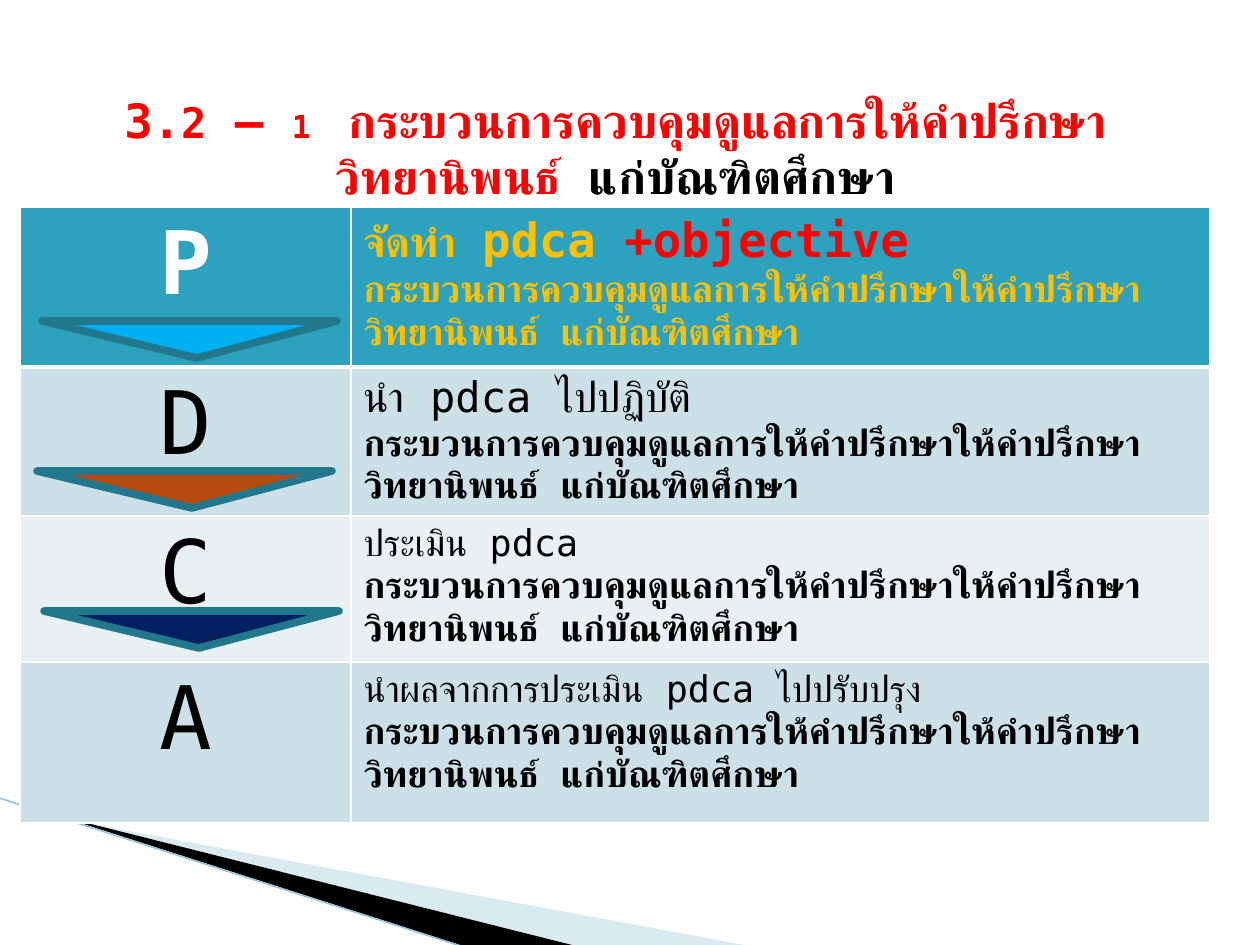
from lxml import etree
from pptx import Presentation
from pptx.dml.color import RGBColor
from pptx.enum.shapes import MSO_CONNECTOR, MSO_SHAPE
from pptx.enum.text import MSO_ANCHOR, PP_ALIGN
from pptx.oxml.ns import qn
from pptx.util import Emu, Pt

TRIANGLE = MSO_SHAPE.ISOSCELES_TRIANGLE
STRAIGHT = MSO_CONNECTOR.STRAIGHT
MIDDLE = MSO_ANCHOR.MIDDLE
CENTER, LEFT = PP_ALIGN.CENTER, PP_ALIGN.LEFT

PX_PER_INCH = 126
FONT = "DejaVu Sans Mono"
WHITE, BLACK, RED, GOLD = "FFFFFF", "000000", "FF0000", "FFC000"
HEADER, BAND_DARK, BAND_LIGHT = "2DA2BF", "CDE0E8", "E8F0F4"
TEAL = "21788D"

PROCESS = "กระบวนการควบคุมดูแลการให้คำปรึกษาให้คำปรึกษาวิทยานิพนธ์ แก่บัณฑิตศึกษา"

# A span is (text, size, colour, bold).
TITLE = [
    ("3.", 27, RED, True),
    ("2", 24, RED, True),
    (" – ", 27, RED, True),
    ("1  ", 18, RED, True),
    ("กระบวนการควบคุมดูแลการให้คำปรึกษาวิทยานิพนธ์ ", 27, RED, True),
    ("แก่บัณฑิตศึกษา", 27, BLACK, True),
]
PLAN_SPANS = [
    ("จัดทำ ", 24, GOLD, True),
    ("pdca ", 27, GOLD, True),
    ("+objective", 27, RED, True),
]
# Letter, letter colour, process colour, fill, row height, first-line spans
STEPS = [
    ("P", WHITE, GOLD, HEADER, 160, PLAN_SPANS),
    ("D", BLACK, BLACK, BAND_DARK, 149, [("นำ pdca ไปปฏิบัติ", 24, BLACK, False)]),
    ("C", BLACK, BLACK, BAND_LIGHT, 146, [("ประเมิน pdca", 21, BLACK, False)]),
    ("A", BLACK, BLACK, BAND_DARK, 161,
     [("นำผลจากการประเมิน pdca ไปปรับปรุง", 21, BLACK, False)]),
]
ARROWS = [(42, 321, "00B0F0"), (37, 471, "B54A10"), (44, 611, "002060")]


def px(length):
    return Emu(round(length * 914400 / PX_PER_INCH))


def rgb(color):
    return RGBColor.from_string(color)


class SlideBuilder:
    """Draws elements on one slide in a shared style."""

    def __init__(self, slide, font):
        self.slide = slide
        self.font = font

    def add_spans(self, para, spans, align=LEFT):
        para.alignment = align
        for text, size, color, bold in spans:
            run = para.add_run()
            run.text = text
            run.font.size = Pt(size)
            run.font.bold = bold
            run.font.name = self.font
            run.font.color.rgb = rgb(color)
            for script in ("a:ea", "a:cs"):
                etree.SubElement(run.font._element, qn(script), typeface=self.font)

    def text(self, left, top, width, height, spans):
        box = self.slide.shapes.add_textbox(px(left), px(top), px(width), px(height))
        frame = box.text_frame
        frame.word_wrap = True
        frame.vertical_anchor = MIDDLE
        self.add_spans(frame.paragraphs[0], spans, CENTER)

    def polygon(self, points, color, opacity=100):
        start, *rest = [(px(x), px(y)) for x, y in points]
        builder = self.slide.shapes.build_freeform(*start)
        builder.add_line_segments(rest, close=True)
        shape = builder.convert_to_shape()
        shape.shadow.inherit = False
        shape.line.fill.background()
        shape.fill.solid()
        shape.fill.fore_color.rgb = rgb(color)
        if opacity < 100:
            fill = shape._element.spPr.find(qn("a:solidFill"))
            etree.SubElement(fill[0], qn("a:alpha"), val=str(opacity * 1000))

    def line(self, start, end, color, weight):
        points = [px(value) for value in (*start, *end)]
        connector = self.slide.shapes.add_connector(STRAIGHT, *points)
        connector.line.color.rgb = rgb(color)
        connector.line.width = Pt(weight)
        etree.SubElement(connector._element.spPr, qn("a:effectLst"))

    def down_arrow(self, left, top, color):
        shape = self.slide.shapes.add_shape(
            TRIANGLE, px(left), px(top), px(295), px(37))
        shape.adjustments[0] = 0.475
        shape.rotation = 180
        shape.shadow.inherit = False
        shape.fill.solid()
        shape.fill.fore_color.rgb = rgb(color)
        shape.line.color.rgb = rgb(TEAL)
        shape.line.width = Pt(4.33)
        outline = shape._element.spPr.find(qn("a:ln"))
        etree.SubElement(outline, qn("a:round"))

    def cell_style(self, cell, color, bottom_weight):
        """Set white borders and then the fill, in the order the schema asks."""
        props = cell._tc.get_or_add_tcPr()
        weights = {"lnL": 1, "lnR": 1, "lnT": 1, "lnB": bottom_weight}
        for side, weight in weights.items():
            border = etree.SubElement(props, qn("a:" + side), w=str(int(Pt(weight))))
            fill = etree.SubElement(border, qn("a:solidFill"))
            etree.SubElement(fill, qn("a:srgbClr"), val=WHITE)
        cell.fill.solid()
        cell.fill.fore_color.rgb = rgb(color)

    def step_table(self, left, top, widths, steps):
        height = sum(step[4] for step in steps)
        table = self.slide.shapes.add_table(
            len(steps), len(widths), px(left), px(top),
            px(sum(widths)), px(height)).table
        for column, width in zip(table.columns, widths):
            column.width = px(width)
        for index, step in enumerate(steps):
            letter, letter_color, process_color, fill, row_height, spans = step
            is_header = index == 0
            table.rows[index].height = px(row_height)
            letter_cell, detail_cell = table.rows[index].cells
            for cell in (letter_cell, detail_cell):
                self.cell_style(cell, fill, 3 if is_header else 1)
            self.add_spans(letter_cell.text_frame.paragraphs[0],
                           [(letter, 50, letter_color, is_header)], CENTER)
            frame = detail_cell.text_frame
            self.add_spans(frame.paragraphs[0], spans)
            self.add_spans(frame.add_paragraph(), [(PROCESS, 21, process_color, True)])


def main():
    deck = Presentation()
    deck.slide_width, deck.slide_height = px(1260), px(945)
    page = SlideBuilder(deck.slides.add_slide(deck.slide_layouts[6]), FONT)

    page.polygon([(69, 820), (750, 946), (575, 946), (69, 819)], "A0CBDC", 40)
    page.polygon([(67, 818), (576, 946), (469, 948), (68, 819)], BLACK)
    page.line((-1, 798), (467, 948), "97C5D8", 0.95)
    page.step_table(20, 207, [331, 859], STEPS)
    page.text(0, 118, 1231, 59, TITLE)
    for left, top, color in ARROWS:
        page.down_arrow(left, top, color)

    deck.save("out.pptx")


if __name__ == "__main__":
    main()
